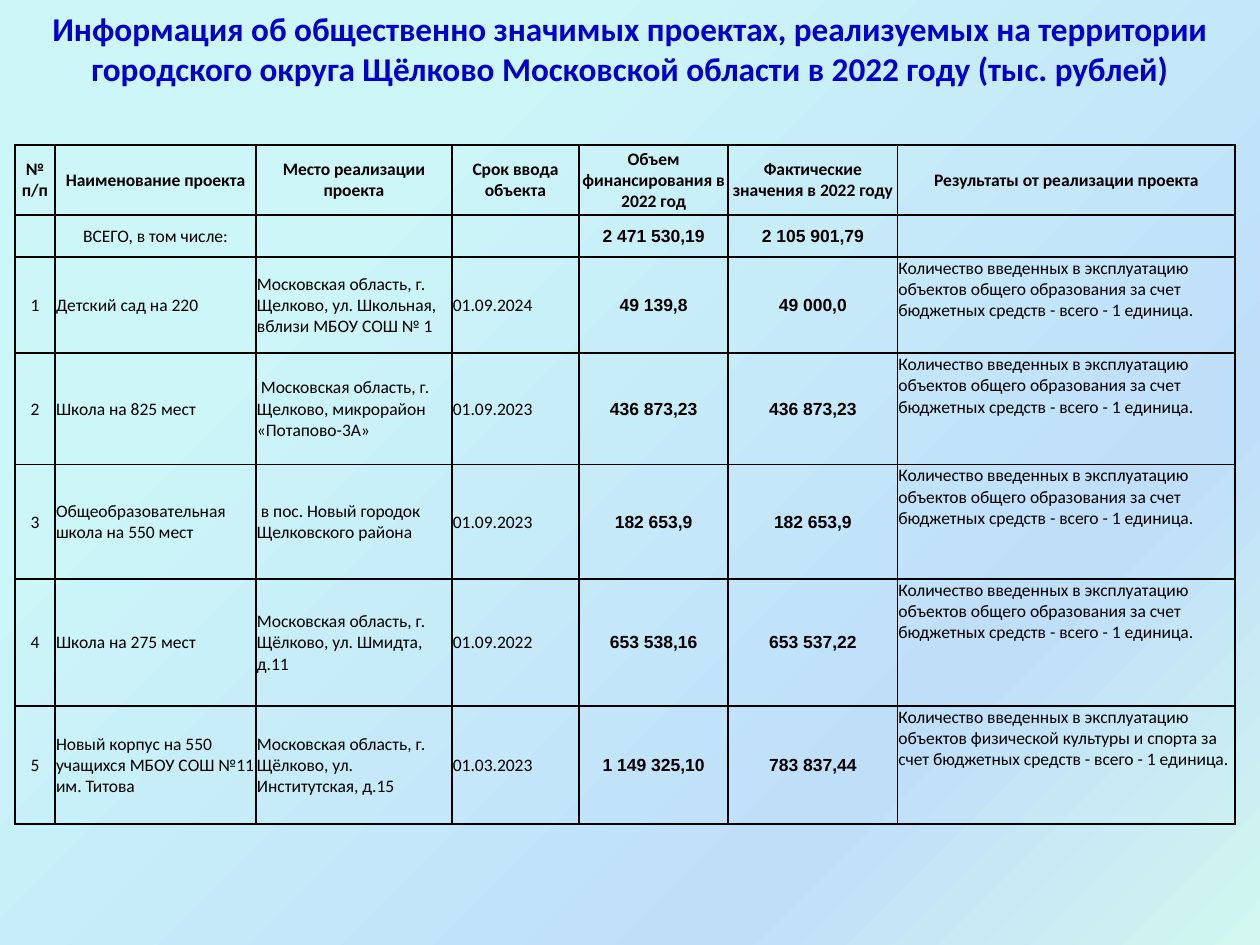
import pptx
import pptx.util
import pptx.dml.color
import pptx.enum.text
import pptx.oxml
import pptx.oxml.ns
from lxml import etree

Cm, Pt = pptx.util.Cm, pptx.util.Pt
ALIGN = pptx.enum.text.PP_ALIGN
ANCHOR = pptx.enum.text.MSO_ANCHOR

# Content
HEADLINE = ("Информация об общественно значимых проектах, реализуемых на территории "
            "городского округа Щёлково Московской области в 2022 году (тыс. рублей)")
HEADINGS = ("№ п/п", "Наименование проекта", "Место реализации проекта",
            "Срок ввода объекта", "Объем финансирования в 2022 год",
            "Фактические значения в 2022 году", "Результаты от реализации проекта")
TOTALS = ("", "ВСЕГО, в том числе:", "", "", "2 471 530,19", "2 105 901,79", "")
RESULT = "Количество введенных в эксплуатацию объектов {} за счет бюджетных средств - всего - 1 единица."
SCHOOLING = RESULT.format("общего образования")
SPORT = RESULT.format("физической культуры и спорта")
PROJECTS = [
    ("1", "Детский сад на 220",
     "Московская область, г. Щелково, ул. Школьная, вблизи МБОУ СОШ № 1",
     "01.09.2024", "49 139,8", "49 000,0", SCHOOLING),
    ("2", "Школа на 825 мест",
     " Московская область, г. Щелково, микрорайон «Потапово-3А»",
     "01.09.2023", "436 873,23", "436 873,23", SCHOOLING),
    ("3", "Общеобразовательная школа на 550 мест",
     " в пос. Новый городок Щелковского района",
     "01.09.2023", "182 653,9", "182 653,9", SCHOOLING),
    ("4", "Школа на 275 мест",
     "Московская область, г. Щёлково, ул. Шмидта, д.11",
     "01.09.2022", "653 538,16", "653 537,22", SCHOOLING),
    ("5", "Новый корпус на 550 учащихся МБОУ СОШ №11 им. Титова",
     "Московская область, г. Щёлково, ул. Институтская, д.15",
     "01.03.2023", "1 149 325,10", "783 837,44", SPORT),
]

# Layout in centimetres
COLUMN_WIDTHS = (0.81, 4.05, 3.95, 2.56, 3.01, 3.41, 6.81)
ROW_HEIGHTS = (1.41, 0.85, 1.94, 2.24, 2.31, 2.56, 2.38)
NUMBER, MONEY, OUTCOME = 0, (4, 5), 6

THEME = {
    "headline": "0000CC", "text": "000000", "border": "000000",
    "gradient": ((25, "CCF6F8"), (75, "BFDFF9"), (100, "D1F7EF")),
    "text_font": "Calibri", "money_font": "Arial",
    "headline_size": 19, "table_size": 10, "border_width": 1,
}


def style(paragraph, font, size, color, bold, align):
    paragraph.alignment = align
    for run in paragraph.runs:
        run.font.name, run.font.size, run.font.bold = font, Pt(size), bold
        run.font.color.rgb = pptx.dml.color.RGBColor.from_string(color)


def paint_background(slide):
    fill = slide.background.fill
    fill.gradient()
    fill.gradient_angle = 315
    qn = pptx.oxml.ns.qn
    stops = slide.background._cSld.find(".//" + qn("a:gsLst"))
    for stop in list(stops):
        stops.remove(stop)
    for position, color in THEME["gradient"]:
        stop = etree.SubElement(stops, qn("a:gs"), pos=str(position * 1000))
        etree.SubElement(stop, qn("a:srgbClr"), val=color)


def draw_borders(cell):
    properties = cell._tc.get_or_add_tcPr()
    for index, side in enumerate(("lnL", "lnR", "lnT", "lnB")):
        properties.insert(index, pptx.oxml.parse_xml(
            f'<a:{side} {pptx.oxml.ns.nsdecls("a")} w="{Pt(THEME["border_width"])}">'
            f'<a:solidFill><a:srgbClr val="{THEME["border"]}"/></a:solidFill></a:{side}>'))


def fill_cell(cell, text, row, column):
    is_heading, is_project = row == 0, row > 1
    is_money = column in MONEY and not is_heading
    centred = not is_project or column == NUMBER or is_money
    cell.text_frame.text = text
    cell.margin_left = cell.margin_right = cell.margin_top = Cm(0.02)
    cell.margin_bottom = 0
    cell.vertical_anchor = ANCHOR.TOP if is_project and column == OUTCOME else ANCHOR.MIDDLE
    cell.fill.background()
    draw_borders(cell)
    style(cell.text_frame.paragraphs[0],
          THEME["money_font"] if is_money else THEME["text_font"],
          THEME["table_size"], THEME["text"], is_heading or is_money,
          ALIGN.CENTER if centred else ALIGN.LEFT)


def add_headline(slide, width):
    headline = slide.shapes.add_textbox(0, Cm(0.05), width, Cm(1.88)).text_frame
    headline.word_wrap = True
    headline.text = HEADLINE
    style(headline.paragraphs[0], THEME["text_font"], THEME["headline_size"],
          THEME["headline"], True, ALIGN.CENTER)


def add_projects(slide):
    rows = [HEADINGS, TOTALS, *PROJECTS]
    projects = slide.shapes.add_table(
        len(rows), len(HEADINGS), Cm(0.3), Cm(2.92),
        Cm(sum(COLUMN_WIDTHS)), Cm(sum(ROW_HEIGHTS))).table
    projects.first_row = projects.horz_banding = False
    for column, width in zip(projects.columns, COLUMN_WIDTHS):
        column.width = Cm(width)
    for row, height in zip(projects.rows, ROW_HEIGHTS):
        row.height = Cm(height)
    for r, texts in enumerate(rows):
        for c, text in enumerate(texts):
            fill_cell(projects.cell(r, c), text, r, c)


def main():
    deck = pptx.Presentation()
    deck.slide_width, deck.slide_height = Cm(25.4), Cm(19.05)
    slide = deck.slides.add_slide(deck.slide_layouts[6])
    paint_background(slide)
    add_headline(slide, deck.slide_width)
    add_projects(slide)
    deck.save("out.pptx")


if __name__ == "__main__":
    main()
